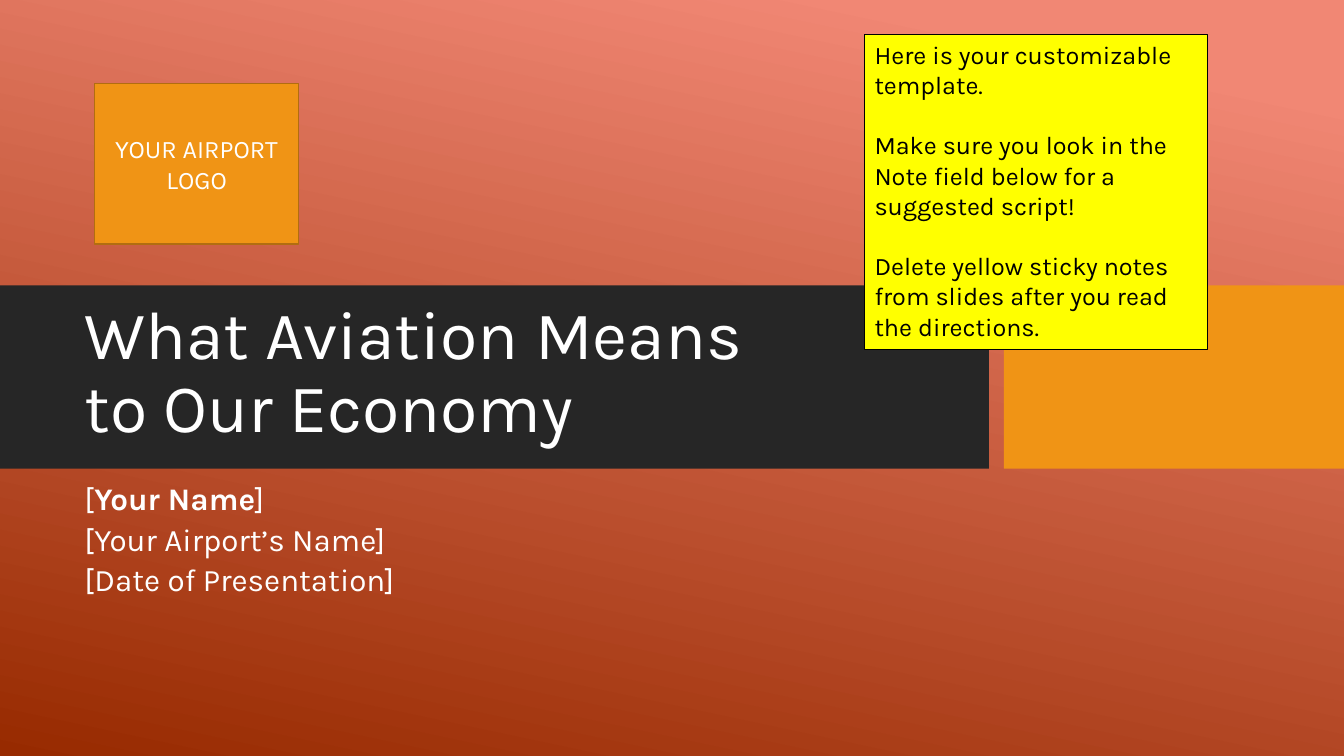
from pptx import Presentation
from pptx.dml.color import RGBColor
from pptx.enum.shapes import MSO_SHAPE
from pptx.enum.text import MSO_ANCHOR, PP_ALIGN
from pptx.util import Cm, Pt

COLORS = {
    "coral": "F18774",
    "rust": "972A00",
    "band": "262626",
    "orange": "F09415",
    "orange_line": "B26D10",
    "yellow": "FFFF00",
    "white": "FFFFFF",
    "black": "000000",
}


def rgb(name):
    return RGBColor.from_string(COLORS[name])


class Deck:
    font = "Karla"

    def __init__(self, width, height):
        self.prs = Presentation()
        self.prs.slide_width = Cm(width)
        self.prs.slide_height = Cm(height)
        self.slide = self.prs.slides.add_slide(self.prs.slide_layouts[6])

    def background(self, stops, angle):
        fill = self.slide.background.fill
        fill.gradient()
        fill.gradient_angle = angle
        for stop, (position, color) in zip(fill.gradient_stops, stops):
            stop.position = position
            stop.color.rgb = rgb(color)

    def rect(self, box, color, line=None, line_width=1):
        sp = self.slide.shapes.add_shape(MSO_SHAPE.RECTANGLE, *map(Cm, box))
        sp.shadow.inherit = False
        sp.fill.solid()
        sp.fill.fore_color.rgb = rgb(color)
        if line:
            sp.line.color.rgb = rgb(line)
            sp.line.width = Pt(line_width)
        else:
            sp.line.fill.background()
        return sp

    def textbox(self, box):
        return self.slide.shapes.add_textbox(*map(Cm, box))

    def set_text(self, sp, paragraphs, size, color="white",
                 anchor=MSO_ANCHOR.TOP, align=PP_ALIGN.LEFT, spacing=1.0, gap=0):
        tf = sp.text_frame
        tf.word_wrap = True
        tf.vertical_anchor = anchor
        for i, text in enumerate(paragraphs):
            p = tf.add_paragraph() if i else tf.paragraphs[0]
            p.alignment = align
            p.line_spacing = spacing
            if i and gap:
                p.space_before = Pt(gap)
            if isinstance(text, str):
                p.text = text
            else:
                for part, bold in text:
                    r = p.add_run()
                    r.text = part
                    r.font.bold = bold
            p.font.name = self.font
            p.font.size = Pt(size)
            p.font.color.rgb = rgb(color)


def main():
    deck = Deck(33.87, 19.05)
    deck.background([(0.1, "coral"), (1, "rust")], 258)

    deck.rect((0, 7.19, 24.92, 4.62), "band")
    deck.rect((25.3, 7.19, 8.57, 4.62), "orange")

    title = deck.textbox((1.88, 7.59, 22.63, 3.81))
    deck.set_text(title, ["What Aviation Means\vto Our Economy"], 48.6,
                  anchor=MSO_ANCHOR.BOTTOM, spacing=0.9)

    subtitle = deck.textbox((1.88, 12.22, 22.63, 3.1))
    deck.set_text(subtitle, [
        [("[", False), ("Your Name", True), ("]", False)],
        "[Your Airport’s Name]",
        "[Date of Presentation]",
    ], 22.4, spacing=0.7, gap=10)

    logo = deck.rect((2.39, 2.11, 5.13, 4.04), "orange", "orange_line")
    deck.set_text(logo, ["YOUR AIRPORT LOGO"], 18,
                  anchor=MSO_ANCHOR.MIDDLE, align=PP_ALIGN.CENTER)

    sticky = deck.rect((21.79, 0.86, 8.64, 7.95), "yellow", "black", 0.75)
    deck.set_text(sticky, [
        "Here is your customizable template.",
        "Make sure you look in the Note field below for a suggested script!",
        "Delete yellow sticky notes from slides after you read the directions.",
    ], 18, "black", gap=21.5)

    deck.prs.save("out.pptx")


if __name__ == "__main__":
    main()
